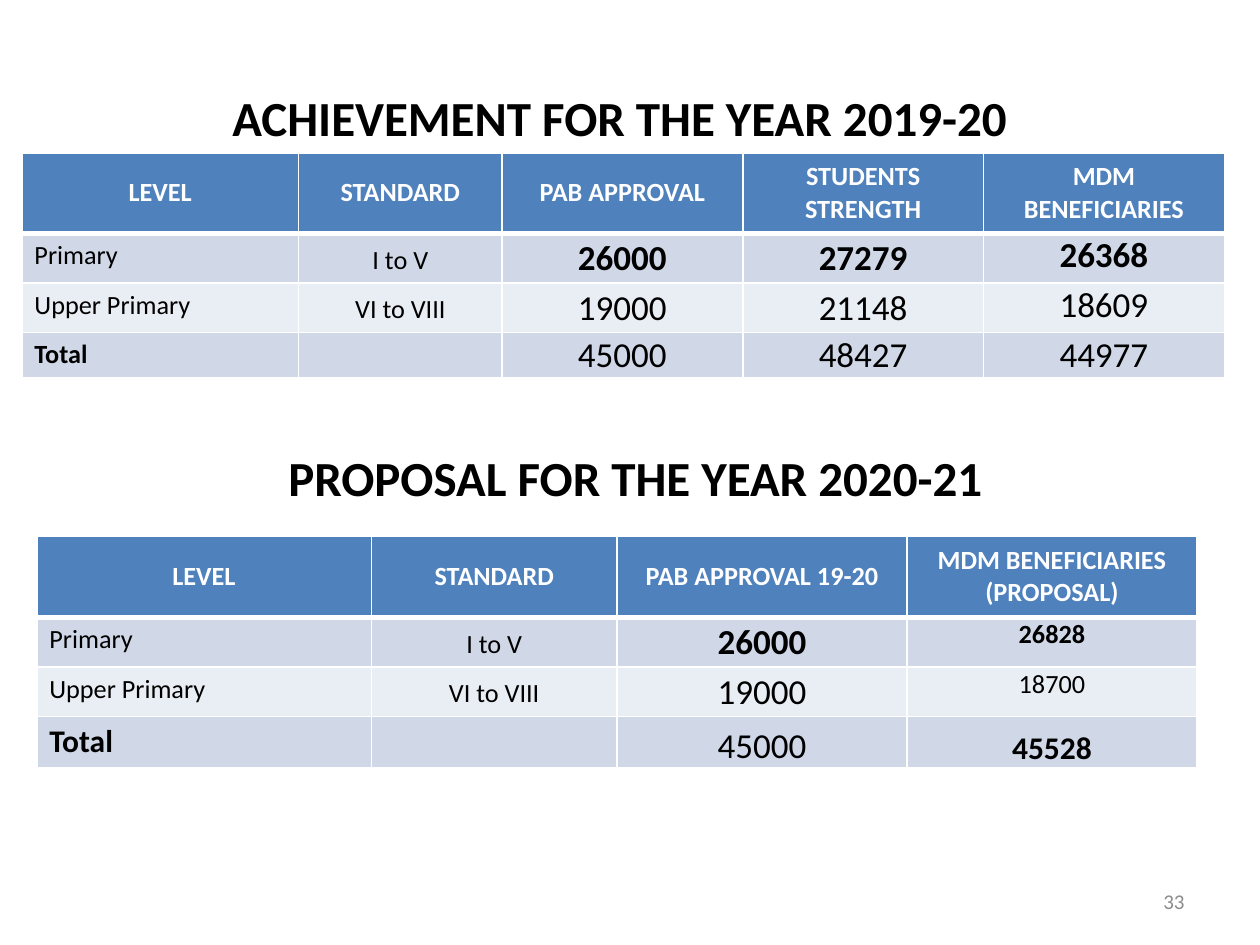
from typing import NamedTuple

from lxml import etree
from pptx import Presentation
from pptx.dml.color import RGBColor
from pptx.enum import text as t
from pptx.oxml.ns import qn
from pptx.util import Pt

FONT = "Calibri"
WHITE = RGBColor(0xFF, 0xFF, 0xFF)
BLACK = RGBColor(0, 0, 0)
GREY = RGBColor(0x8C, 0x8C, 0x8C)
HEADER_BLUE = RGBColor(0x4F, 0x81, 0xBD)
BANDS = (RGBColor(0xD0, 0xD8, 0xE8), RGBColor(0xE9, 0xED, 0xF4))
CENTER = t.PP_ALIGN.CENTER
TOP, MIDDLE, BOTTOM = (t.MSO_ANCHOR.TOP, t.MSO_ANCHOR.MIDDLE,
                       t.MSO_ANCHOR.BOTTOM)


class Entry(NamedTuple):
    text: str
    size: float = 15
    bold: bool = False
    align: t.PP_ALIGN = CENTER
    anchor: t.MSO_ANCHOR = TOP
    color: RGBColor = BLACK
    tight: bool = False   # figures sit in almost no cell margin
    spaced: bool = False  # standards have looser line spacing


class Summary(NamedTuple):
    left: float
    top: float
    widths: list[float]
    heights: list[float]
    rows: list[list[Entry]]


def heading(text: str) -> Entry:
    return Entry(text, bold=True, anchor=MIDDLE, color=WHITE)


def level(text: str, size: float = 15, bold: bool = False) -> Entry:
    return Entry(text, size, bold, t.PP_ALIGN.LEFT)


def standard(text: str) -> Entry:
    return Entry(text, spaced=True)


def figure(text: str, anchor: t.MSO_ANCHOR = MIDDLE, size: float = 20,
           bold: bool = False) -> Entry:
    return Entry(text, size, bold, anchor=anchor, tight=True)


def write(frame, text: str, size: float, bold: bool, color: RGBColor,
          align: t.PP_ALIGN) -> None:
    frame.text = text
    paragraph = frame.paragraphs[0]
    paragraph.alignment = align
    for run in paragraph.runs:
        run.font.name = FONT
        run.font.size = Pt(size)
        run.font.bold = bold
        run.font.color.rgb = color


def add_borders(cell, bottom: float) -> None:
    properties = cell._tc.get_or_add_tcPr()
    widths = {"lnL": 1, "lnR": 1, "lnT": 1, "lnB": bottom}
    for position, (side, width) in enumerate(widths.items()):
        line = etree.Element(qn(f"a:{side}"), w=str(Pt(width)))
        fill = etree.SubElement(line, qn("a:solidFill"))
        etree.SubElement(fill, qn("a:srgbClr"), val=str(WHITE))
        properties.insert(position, line)


def fill_cell(cell, entry: Entry, fill: RGBColor, bottom: float) -> None:
    write(cell.text_frame, entry.text, entry.size, entry.bold, entry.color,
          entry.align)
    paragraph = cell.text_frame.paragraphs[0]
    if not entry.text:
        etree.SubElement(paragraph._p, qn("a:endParaRPr"),
                         sz=str(int(entry.size * 100)))
    if entry.spaced:
        paragraph.line_spacing = 1.15
        paragraph.space_after = Pt(10)
    if entry.tight:
        cell.margin_left = cell.margin_right = cell.margin_top = Pt(0.7)
        cell.margin_bottom = 0
    cell.vertical_anchor = entry.anchor
    cell.fill.solid()
    cell.fill.fore_color.rgb = fill
    add_borders(cell, bottom)


def add_summary(slide, summary: Summary) -> None:
    table = slide.shapes.add_table(
        len(summary.rows), len(summary.widths), Pt(summary.left),
        Pt(summary.top), Pt(sum(summary.widths)),
        Pt(sum(summary.heights))).table
    for column, width in zip(table.columns, summary.widths):
        column.width = Pt(width)
    for r, (entries, height) in enumerate(zip(summary.rows, summary.heights)):
        table.rows[r].height = Pt(height)
        fill = BANDS[(r - 1) % 2] if r else HEADER_BLUE
        for c, entry in enumerate(entries):
            fill_cell(table.cell(r, c), entry, fill, 1 if r else 3)


def place(shape, left: float, top: float, width: float, height: float):
    shape.left, shape.top = Pt(left), Pt(top)
    shape.width, shape.height = Pt(width), Pt(height)


def add_text(slide, box: tuple, text: str, size: float, bold: bool,
             color: RGBColor, align: t.PP_ALIGN, anchor: t.MSO_ANCHOR) -> None:
    frame = slide.shapes.add_textbox(*map(Pt, box)).text_frame
    frame.word_wrap = True
    frame.vertical_anchor = anchor
    write(frame, text, size, bold, color, align)


ACHIEVEMENT = Summary(
    12.5, 87.3, [158.2, 116.2, 137.6, 137.6, 137.6], [46, 28, 28, 25],
    [[heading(name) for name in ("LEVEL", "STANDARD", "PAB APPROVAL",
                                 "STUDENTS STRENGTH", "MDM BENEFICIARIES")],
     [level("Primary"), standard("I to V"), figure("26000", bold=True),
      figure("27279", bold=True), figure("26368", TOP, bold=True)],
     [level("Upper Primary"), standard("VI to VIII"), figure("19000"),
      figure("21148"), figure("18609", TOP)],
     [level("Total", bold=True), Entry(""), figure("45000", BOTTOM),
      figure("48427", BOTTOM), figure("44977", BOTTOM)]])

PROPOSAL = Summary(
    21, 306.2, [191.2, 140.4, 165.7, 165.7], [46.5, 28, 28, 29],
    [[heading(name) for name in ("LEVEL", "STANDARD", "PAB APPROVAL 19-20",
                                 "MDM BENEFICIARIES (PROPOSAL)")],
     [level("Primary"), standard("I to V"), figure("26000", bold=True),
      figure("26828", TOP, 15, True)],
     [level("Upper Primary"), standard("VI to VIII"), figure("19000"),
      figure("18700", TOP, 15)],
     [level("Total", 18, True), Entry(""), figure("45000", BOTTOM),
      figure("45528", BOTTOM, 18, True)]])


def main() -> None:
    deck = Presentation()
    deck.slide_width, deck.slide_height = Pt(720), Pt(540)
    slide = deck.slides.add_slide(deck.slide_layouts[5])

    # Title, set low enough to stand just above the first table
    title = slide.shapes.title
    place(title, 27, 18, 654, 150)
    title.text_frame.vertical_anchor = TOP
    title.text_frame.margin_top = Pt(32)
    write(title.text_frame, "ACHIEVEMENT FOR THE YEAR 2019-20", 28, True,
          BLACK, CENTER)

    # Achievement and proposal tables
    add_summary(slide, ACHIEVEMENT)
    add_summary(slide, PROPOSAL)
    add_text(slide, (36, 252, 654, 41), "PROPOSAL FOR THE YEAR 2020-21", 28,
             True, BLACK, CENTER, TOP)

    # Slide number
    add_text(slide, (516, 500.5, 168, 28.75), "33", 12, False, GREY,
             t.PP_ALIGN.RIGHT, MIDDLE)
    deck.save("out.pptx")


if __name__ == "__main__":
    main()
